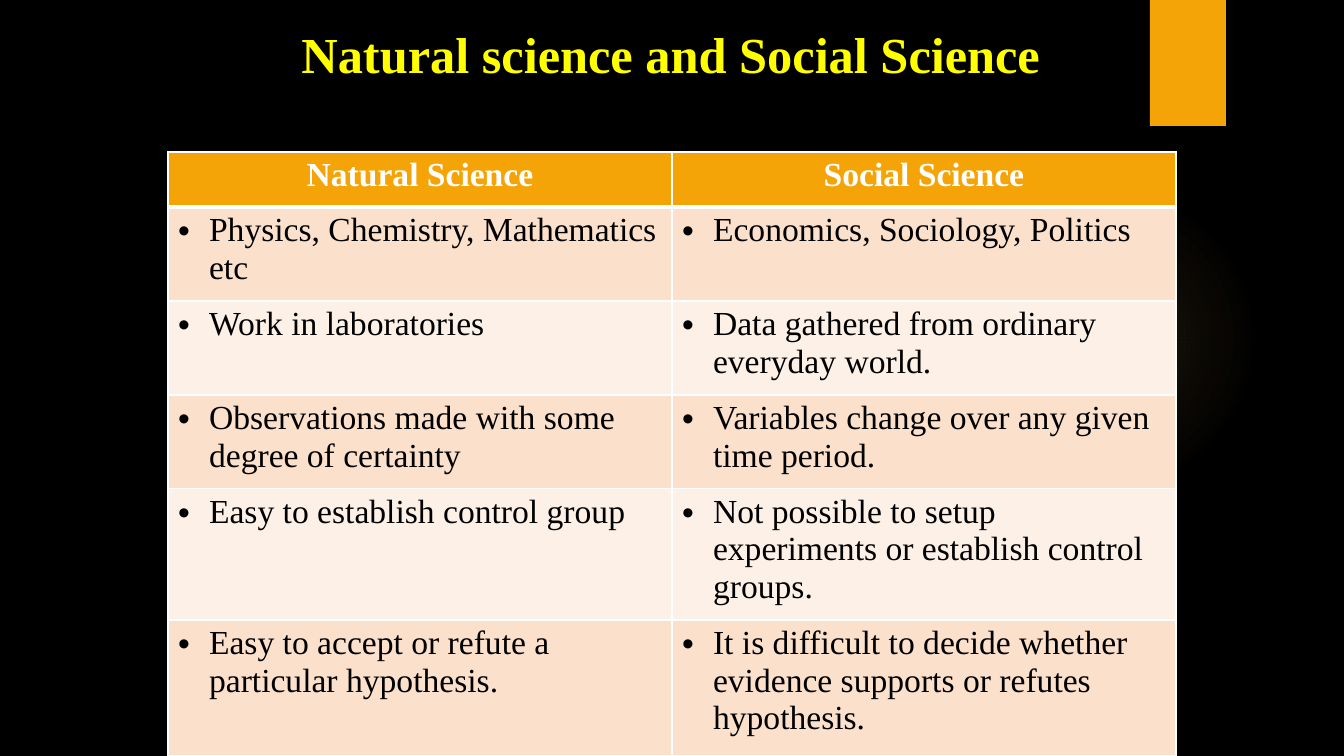
from lxml import etree
from pptx import Presentation
from pptx.dml.color import RGBColor
from pptx.enum.shapes import MSO_SHAPE
from pptx.enum.text import PP_ALIGN
from pptx.oxml import parse_xml
from pptx.oxml.ns import nsdecls, qn
from pptx.util import Emu, Pt

# Content
TITLE = "Natural science and Social Science"
HEADERS = ("Natural Science", "Social Science")
ROWS = [
    ("Physics, Chemistry, Mathematics etc", "Economics, Sociology, Politics"),
    ("Work in laboratories", "Data gathered from ordinary everyday world."),
    ("Observations made with some degree of certainty",
     "Variables change over any given time period."),
    ("Easy to establish control group",
     "Not possible to setup experiments or establish control groups."),
    ("Easy to accept or refute a particular hypothesis.",
     "It is difficult to decide whether evidence supports or refutes hypothesis."),
]

# Layout in px
SLIDE = (1344, 756)
GLOW = (948, 184, 310, 310)
TAB = (1150, 0, 76, 126)
TITLE_BOX = (15, 14, 1312, 115)
TITLE_INSET = 9
TABLE_LEFT, TABLE_TOP, COL_WIDTH = 168, 152, 504
ROW_HEIGHTS = (55, 94, 94, 94, 127, 136)
BULLET_INDENT = 31


class Theme:
    font = "Times New Roman"
    title_size, table_size = 36, 24
    back, title, accent = "000000", "FFFF00", "F5A408"
    header_text, body_text, border = "FFFFFF", "000000", "FFFFFF"
    bands = ("FBE0CC", "FDF0E7")
    glow = "FAC96A"
    glow_stops = ((0, 7), (36, 6), (69, 0))  # position %, opacity %


def px(n):
    return Emu(round(n * 914400 / 100.8))


def box(rect):
    return [px(n) for n in rect]


def rgb(code):
    return RGBColor.from_string(code)


def put_text(tf, text, size, color, bold=False, align=PP_ALIGN.LEFT, bullet=False):
    tf.word_wrap = True
    p = tf.paragraphs[0]
    p.alignment = align
    if bullet:
        pPr = p._p.get_or_add_pPr()
        pPr.set("marL", str(px(BULLET_INDENT)))
        pPr.set("indent", str(-px(BULLET_INDENT)))
        etree.SubElement(pPr, qn("a:buFont")).set("typeface", "Arial")
        etree.SubElement(pPr, qn("a:buChar")).set("char", "•")
    r = p.add_run()
    r.text = text
    r.font.name, r.font.size, r.font.bold = Theme.font, Pt(size), bold
    r.font.color.rgb = rgb(color)


def add_shape(slide, kind, rect, color):
    s = slide.shapes.add_shape(kind, *box(rect))
    s.shadow.inherit = False
    s.fill.solid()
    s.fill.fore_color.rgb = rgb(color)
    s.line.fill.background()
    return s


def set_glow(s):
    stops = "".join(
        f'<a:gs pos="{pos * 1000}"><a:srgbClr val="{Theme.glow}">'
        f'<a:alpha val="{alpha * 1000}"/></a:srgbClr></a:gs>'
        for pos, alpha in Theme.glow_stops)
    grad = parse_xml(
        f'<a:gradFill {nsdecls("a")} rotWithShape="1"><a:gsLst>{stops}</a:gsLst>'
        '<a:path path="circle"><a:fillToRect l="50000" t="50000" r="50000" b="50000"/>'
        '</a:path></a:gradFill>')
    spPr = s._element.spPr
    spPr.replace(spPr.find(qn("a:solidFill")), grad)


def set_borders(cell, **widths):
    tcPr = cell._tc.get_or_add_tcPr()
    for i, side in enumerate("LRTB"):
        tcPr.insert(i, parse_xml(
            f'<a:ln{side} {nsdecls("a")} w="{Pt(widths.get(side, 1))}"><a:solidFill>'
            f'<a:srgbClr val="{Theme.border}"/></a:solidFill></a:ln{side}>'))


def add_comparison(slide):
    rows = [HEADERS, *ROWS]
    rect = (TABLE_LEFT, TABLE_TOP, COL_WIDTH * len(HEADERS), sum(ROW_HEIGHTS))
    table = slide.shapes.add_table(len(rows), len(HEADERS), *box(rect)).table
    for col in table.columns:
        col.width = px(COL_WIDTH)
    for i, (texts, height) in enumerate(zip(rows, ROW_HEIGHTS)):
        table.rows[i].height = px(height)
        for j, text in enumerate(texts):
            cell = table.cell(i, j)
            cell.fill.solid()
            if i == 0:
                cell.fill.fore_color.rgb = rgb(Theme.accent)
                put_text(cell.text_frame, text, Theme.table_size, Theme.header_text,
                         bold=True, align=PP_ALIGN.CENTER)
                set_borders(cell, B=3)
            else:
                cell.fill.fore_color.rgb = rgb(Theme.bands[(i - 1) % 2])
                put_text(cell.text_frame, text, Theme.table_size, Theme.body_text,
                         bullet=True)
                set_borders(cell, T=3 if i == 1 else 1)


def main():
    prs = Presentation()
    prs.slide_width, prs.slide_height = box(SLIDE)
    slide = prs.slides.add_slide(prs.slide_layouts[6])
    slide.background.fill.solid()
    slide.background.fill.fore_color.rgb = rgb(Theme.back)

    # Backdrop
    set_glow(add_shape(slide, MSO_SHAPE.OVAL, GLOW, Theme.glow))
    add_shape(slide, MSO_SHAPE.RECTANGLE, TAB, Theme.accent)

    # Title
    tf = slide.shapes.add_textbox(*box(TITLE_BOX)).text_frame
    tf.margin_top = px(TITLE_INSET)
    put_text(tf, TITLE, Theme.title_size, Theme.title, bold=True, align=PP_ALIGN.CENTER)

    # Comparison table
    add_comparison(slide)
    prs.save("out.pptx")


if __name__ == "__main__":
    main()
